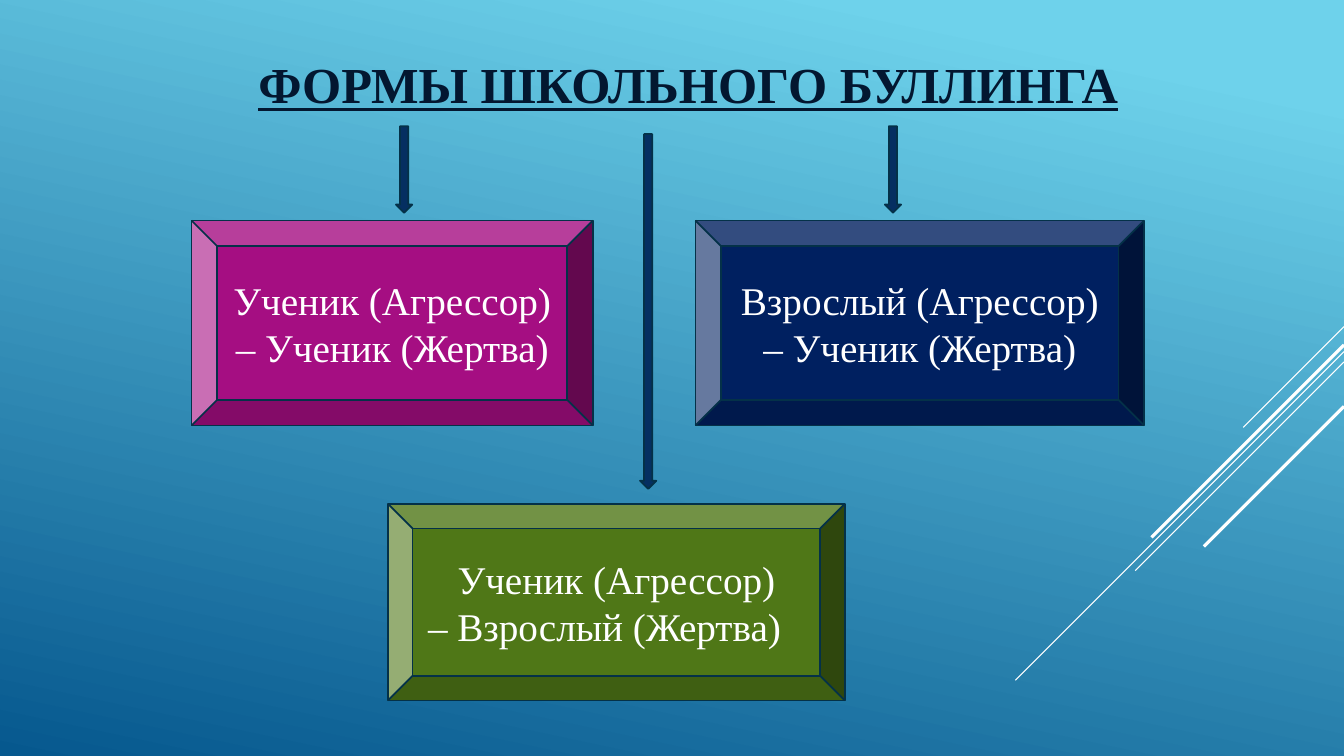
"""Build the slide on the forms of school bullying."""
from lxml.etree import SubElement
from pptx import Presentation
from pptx.dml.color import RGBColor
from pptx.enum.shapes import MSO_CONNECTOR, MSO_SHAPE
from pptx.enum.text import MSO_ANCHOR, MSO_AUTO_SIZE, PP_ALIGN
from pptx.oxml.ns import qn
from pptx.util import Cm, Pt

COLOURS = {
    "sky": "6ED2EB",
    "deep": "06588E",
    "title": "031730",
    "white": "FFFFFF",
    "outline": "043148",
    "arrow": "052F61",
    "magenta": "A50E82",
    "navy": "002060",
    "green": "4F7717",
}
TITLE_FONT = {"name": "Times New Roman", "size": Pt(36), "bold": True, "underline": True}
BOX_FONT = {"name": "Times New Roman", "size": Pt(28)}
SLIDE_WIDTH, SLIDE_HEIGHT = 33.87, 19.05
DIAGONALS = [
    (8.23, 2.54, 0.75),
    (8.86, 8.28, 0.75),
    (9.12, 5.26, 0.75),
    (8.69, 4.85, 2.25),
    (10.24, 3.53, 2.25),
]
BOXES = [
    ("magenta", (4.83, 5.56, 10.11, 5.16), [("Ученик (Агрессор) – Ученик (Жертва)", 0)]),
    ("navy", (17.53, 5.56, 11.3, 5.16), [("Взрослый (Агрессор) – Ученик (Жертва)", 0)]),
    ("green", (9.78, 12.7, 11.51, 4.95), [("Ученик (Агрессор)", 0), ("– Взрослый (Жертва)", 0.6)]),
]
ARROWS = [(9.98, 3.18, 2.18), (22.3, 3.18, 2.18), (16.13, 3.38, 8.94)]
ARROW_WIDTH = 0.41


def colour(name):
    """Return the named colour."""
    return RGBColor.from_string(COLOURS[name])


def format_paragraph(paragraph, font_values, colour_name):
    """Centre a paragraph and set its font."""
    paragraph.alignment = PP_ALIGN.CENTER
    for attribute, value in font_values.items():
        setattr(paragraph.font, attribute, value)
    paragraph.font.color.rgb = colour(colour_name)


def paint_background(slide):
    """Fill the background with a slanted gradient."""
    fill = slide.background.fill
    fill.gradient()
    fill.gradient_angle = 258
    for stop, position, name in zip(fill.gradient_stops, (0.1, 1), ("sky", "deep")):
        stop.position = position
        stop.color.rgb = colour(name)


def add_diagonal(slide, top, length, weight):
    """Draw a 45 degree line down from the right edge."""
    line = slide.shapes.add_connector(
        MSO_CONNECTOR.STRAIGHT,
        Cm(SLIDE_WIDTH), Cm(top), Cm(SLIDE_WIDTH - length), Cm(top + length))
    line.line.color.rgb = colour("white")
    line.line.width = Pt(weight)
    SubElement(line._element.spPr, qn("a:effectLst"))


def set_title(slide, text):
    """Place and format the title."""
    title = slide.shapes.title
    title.left, title.top, title.width, title.height = map(Cm, (5.5, 1.04, 23.7, 2.13))
    frame = title.text_frame
    frame.text = text
    frame.auto_size = MSO_AUTO_SIZE.NONE
    frame.vertical_anchor = MSO_ANCHOR.MIDDLE
    format_paragraph(frame.paragraphs[0], TITLE_FONT, "title")


def add_outlined_shape(slide, kind, bounds, fill_name):
    """Add a filled preset shape with the common outline."""
    shape = slide.shapes.add_shape(kind, *map(Cm, bounds))
    shape.shadow.inherit = False
    shape.fill.solid()
    shape.fill.fore_color.rgb = colour(fill_name)
    shape.line.color.rgb = colour("outline")
    shape.line.width = Pt(1.25)
    return shape


def add_box(slide, fill_name, bounds, lines):
    """Add a bevelled box with its paragraphs and right indents."""
    frame = add_outlined_shape(slide, MSO_SHAPE.BEVEL, bounds, fill_name).text_frame
    frame.word_wrap = True
    frame.vertical_anchor = MSO_ANCHOR.MIDDLE
    for index, (text, right_indent) in enumerate(lines):
        paragraph = frame.add_paragraph() if index else frame.paragraphs[0]
        paragraph.text = text
        if right_indent:
            paragraph._p.get_or_add_pPr().set("marR", str(int(Cm(right_indent))))
        format_paragraph(paragraph, BOX_FONT, "white")


def main():
    """Build and save the presentation."""
    presentation = Presentation()
    presentation.slide_width = Cm(SLIDE_WIDTH)
    presentation.slide_height = Cm(SLIDE_HEIGHT)
    slide = presentation.slides.add_slide(presentation.slide_layouts.get_by_name("Title Only"))
    paint_background(slide)
    for diagonal in DIAGONALS:
        add_diagonal(slide, *diagonal)
    set_title(slide, "ФОРМЫ ШКОЛЬНОГО БУЛЛИНГА")
    for box in BOXES:
        add_box(slide, *box)
    for left, top, height in ARROWS:
        add_outlined_shape(slide, MSO_SHAPE.DOWN_ARROW, (left, top, ARROW_WIDTH, height), "arrow")
    presentation.save("out.pptx")


if __name__ == "__main__":
    main()
